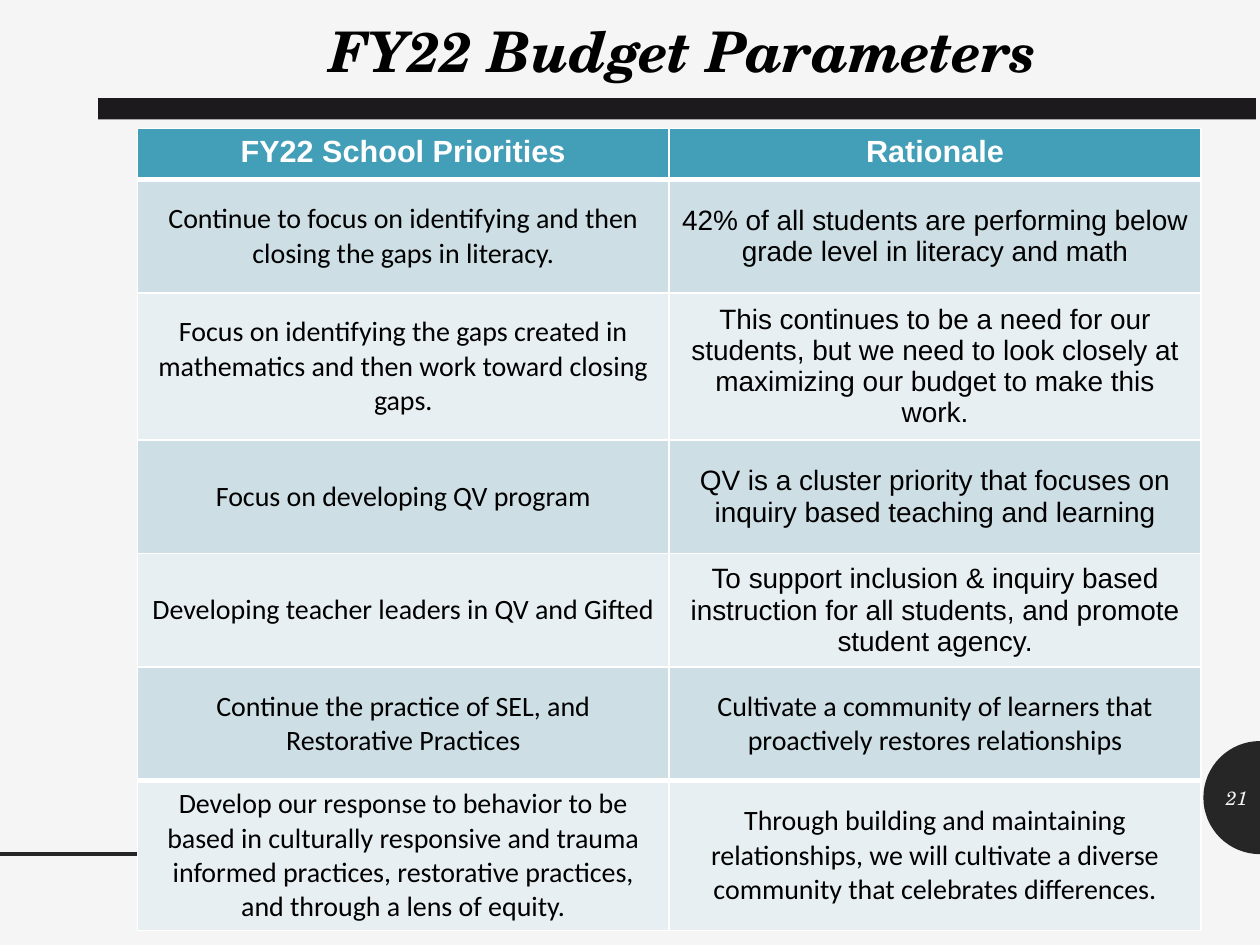
from math import cos, pi, sin

from lxml.etree import SubElement
from pptx import Presentation
from pptx.dml.color import RGBColor
from pptx.enum.shapes import MSO_CONNECTOR, MSO_SHAPE
from pptx.enum.text import MSO_ANCHOR, PP_ALIGN
from pptx.oxml.ns import qn
from pptx.util import Cm, Pt

COLORS = {
    "page": "F5F5F5", "dark": "262626", "bar": "1D1A1D", "black": "000000",
    "white": "FFFFFF", "header": "439EB7", "odd": "CDDEE5", "even": "E8EFF3",
}
DISPLAY, SANS, BODY = "TeX Gyre Schola", "Arial", "Calibri"

HEADINGS = ("FY22 School Priorities", "Rationale")
PRIORITIES = [
    ("Continue to focus on identifying and then closing the gaps in literacy.",
     "42% of all students are performing below grade level in literacy and math"),
    ("Focus on identifying the gaps created in mathematics and then work toward closing gaps.",
     "This continues to be a need for our students, but we need to look closely at "
     "maximizing our budget to make this work."),
    ("Focus on developing QV program",
     "QV is a cluster priority that focuses on inquiry based teaching and learning"),
    ("Developing teacher leaders in QV and Gifted",
     "To support inclusion & inquiry based instruction for all students, "
     "and promote student agency."),
    ("Continue the practice of SEL, and Restorative Practices",
     "Cultivate a community of learners that proactively restores relationships"),
    ("Develop our response to behavior to be based in culturally responsive and trauma "
     "informed practices, restorative practices, and through a lens of equity.",
     "Through building and maintaining relationships, we will cultivate a diverse "
     "community that celebrates differences."),
]
ROW_HEIGHTS = [1.03, 2.29, 2.96, 2.29, 2.29, 2.29, 2.96]


def color(name):
    return RGBColor.from_string(COLORS[name])


def write(frame, text, font=BODY, size=16, ink="black", bold=False, italic=False,
          align=PP_ALIGN.CENTER):
    paragraph = frame.paragraphs[0]
    paragraph.alignment = align
    span = paragraph.add_run()
    span.text = text
    span.font.name = font
    span.font.size = Pt(size)
    span.font.bold = bold
    span.font.italic = italic
    span.font.color.rgb = color(ink)


class PageBuilder:
    def __init__(self, deck):
        self.page = deck.slides.add_slide(deck.slide_layouts[5])
        self.page.background.fill.solid()
        self.page.background.fill.fore_color.rgb = color("page")

    def paint(self, shape, fill):
        shape.shadow.inherit = False
        shape.fill.solid()
        shape.fill.fore_color.rgb = color(fill)
        shape.line.fill.background()

    def title(self, text, left, top, width, height):
        box = self.page.shapes.title
        box.left, box.top, box.width, box.height = map(Cm, (left, top, width, height))
        box.text_frame.vertical_anchor = MSO_ANCHOR.MIDDLE
        write(box.text_frame, text, font=DISPLAY, size=32, bold=True, italic=True)

    def bar(self, left, top, width, height, fill):
        shape = self.page.shapes.add_shape(
            MSO_SHAPE.RECTANGLE, *map(Cm, (left, top, width, height)))
        self.paint(shape, fill)

    def half_disc(self, right, middle, radius, fill, steps=32):
        angles = [pi / 2 + pi * step / steps for step in range(steps + 1)]
        points = [(Cm(right + radius * cos(angle)), Cm(middle + radius * sin(angle)))
                  for angle in angles]
        builder = self.page.shapes.build_freeform(*points[0])
        builder.add_line_segments(points[1:], close=True)
        self.paint(builder.convert_to_shape(), fill)

    def rule(self, left, right, top, ink, width):
        line = self.page.shapes.add_connector(
            MSO_CONNECTOR.STRAIGHT, Cm(left), Cm(top), Cm(right), Cm(top))
        line.line.color.rgb = color(ink)
        line.line.width = Pt(width)
        SubElement(line._element.spPr, qn("a:effectLst"))

    def label(self, text, left, top, width, height, **style):
        box = self.page.shapes.add_textbox(*map(Cm, (left, top, width, height)))
        box.text_frame.word_wrap = True
        box.text_frame.vertical_anchor = MSO_ANCHOR.MIDDLE
        write(box.text_frame, text, **style)

    def borders(self, cell, top, bottom):
        properties = cell._tc.get_or_add_tcPr()
        for side, width in (("L", 1), ("R", 1), ("T", top), ("B", bottom)):
            line = SubElement(properties, qn(f"a:ln{side}"), w=str(Pt(width)))
            fill = SubElement(line, qn("a:solidFill"))
            SubElement(fill, qn("a:srgbClr"), val=COLORS["white"])

    def table(self, left, top, width):
        rows = [HEADINGS, *PRIORITIES]
        table = self.page.shapes.add_table(
            len(rows), 2, Cm(left), Cm(top), Cm(width), Cm(sum(ROW_HEIGHTS))).table
        last = len(rows) - 1
        thick_edges = (1, last)
        for index, texts in enumerate(rows):
            table.rows[index].height = Cm(ROW_HEIGHTS[index])
            for column, text in enumerate(texts):
                cell = table.cell(index, column)
                self.borders(cell, 3 if index in thick_edges else 1,
                             3 if index + 1 in thick_edges else 1)
                cell.fill.solid()
                if index == 0:
                    fill = "header"
                    style = dict(font=SANS, size=17.5, ink="white", bold=True)
                else:
                    fill = "odd" if index % 2 else "even"
                    cell.vertical_anchor = MSO_ANCHOR.MIDDLE
                    style = dict(font=SANS if column and index < last - 1 else BODY)
                cell.fill.fore_color.rgb = color(fill)
                write(cell.text_frame, text, **style)


def main():
    deck = Presentation()
    deck.slide_width, deck.slide_height = Cm(25.4), Cm(19.05)
    builder = PageBuilder(deck)
    builder.half_disc(25.4, 16.08, 1.14, "dark")
    builder.rule(0, 9.37, 17.22, "dark", 2)
    builder.bar(1.98, 1.98, 23.34, 0.43, "bar")
    builder.title("FY22 Budget Parameters", 2.44, 0.2, 22.68, 1.63)
    builder.table(2.77, 2.59, 21.44)
    builder.label("21", 24.26, 15.57, 1.14, 1.02, font=DISPLAY, size=11,
                  ink="page", italic=True, align=PP_ALIGN.RIGHT)
    deck.save("out.pptx")


if __name__ == "__main__":
    main()
